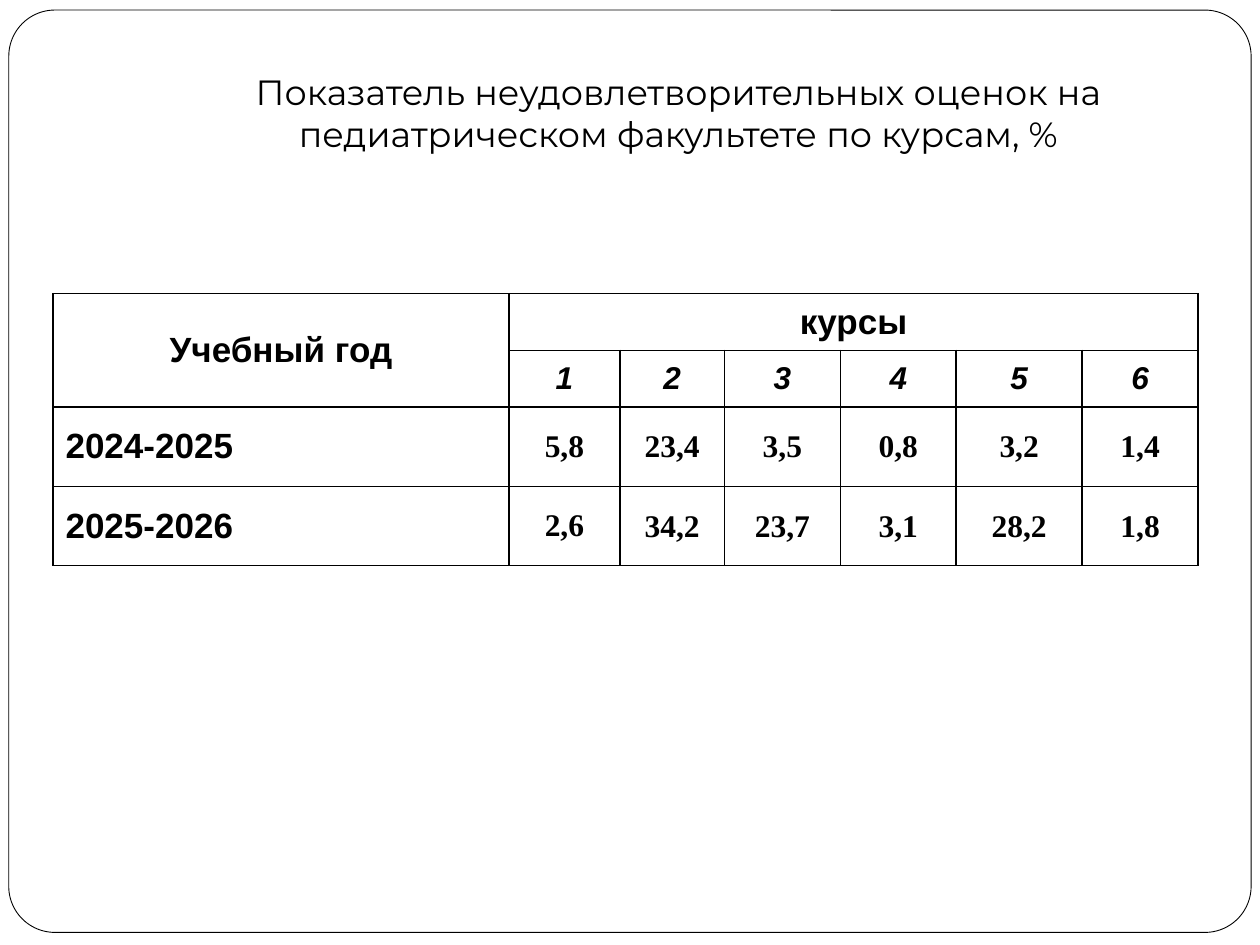
from dataclasses import dataclass

from lxml.etree import SubElement
from pptx import Presentation
from pptx.dml.color import RGBColor
from pptx.enum.shapes import MSO_SHAPE
from pptx.enum.text import MSO_ANCHOR, MSO_AUTO_SIZE, PP_ALIGN
from pptx.oxml.ns import qn
from pptx.util import Inches, Pt

BLACK = RGBColor(0, 0, 0)
WHITE = RGBColor(255, 255, 255)

COLUMN_WIDTHS = (3.62, 0.88, 0.83, 0.92, 0.92, 1, 0.92)
ROW_HEIGHTS = (0.45, 0.45, 0.63, 0.63)
RATES = {
    "2024-2025": ("5,8", "23,4", "3,5", "0,8", "3,2", "1,4"),
    "2025-2026": ("2,6", "34,2", "23,7", "3,1", "28,2", "1,8"),
}


@dataclass(frozen=True)
class CellStyle:
    size: int = 20
    font: str = "Arial"
    italic: bool = False
    align: PP_ALIGN = PP_ALIGN.CENTER
    tight: bool = False


HEADING = CellStyle()
COURSE = CellStyle(size=18, italic=True)
YEAR = CellStyle(align=PP_ALIGN.LEFT)
RATE = CellStyle(size=18, font="Times New Roman")
TIGHT_RATE = CellStyle(size=18, font="Times New Roman", tight=True)


def style_font(font, name: str, size: int) -> None:
    font.name, font.size = name, Pt(size)
    font.color.rgb = BLACK


def add_borders(cell) -> None:
    properties = cell._tc.get_or_add_tcPr()
    for side in ("a:lnL", "a:lnR", "a:lnT", "a:lnB"):
        line = SubElement(properties, qn(side), w=str(Pt(1)))
        fill = SubElement(line, qn("a:solidFill"))
        SubElement(fill, qn("a:srgbClr"), val=str(BLACK))


def write_cell(cell, text: str, style: CellStyle) -> None:
    cell.text_frame.text = text
    cell.vertical_anchor = MSO_ANCHOR.MIDDLE
    if style.tight:
        cell.margin_left = cell.margin_right = cell.margin_top = Inches(0.01)
        cell.margin_bottom = 0
    paragraph = cell.text_frame.paragraphs[0]
    paragraph.alignment = style.align
    font = paragraph.runs[0].font
    style_font(font, style.font, style.size)
    font.bold, font.italic = True, style.italic


def add_frame(slide) -> None:
    """Draw the rounded page frame behind the title."""
    frame = slide.shapes.add_shape(MSO_SHAPE.ROUNDED_RECTANGLE, Inches(0.07),
                                   Inches(0.08), Inches(9.86), Inches(7.32))
    frame.adjustments[0] = 0.05
    frame.shadow.inherit = False
    frame.fill.solid()
    frame.fill.fore_color.rgb = WHITE
    frame.line.color.rgb = BLACK
    frame.line.width = Pt(0.5)
    slide.shapes.title.element.addprevious(frame.element)


def set_title(slide, text: str) -> None:
    title = slide.shapes.title
    title.left, title.top = Inches(1.42), Inches(0.25)
    title.width, title.height = Inches(7.93), Inches(1.08)
    text_frame = title.text_frame
    text_frame.text = text
    text_frame.word_wrap = True
    text_frame.auto_size = MSO_AUTO_SIZE.NONE
    text_frame.vertical_anchor = MSO_ANCHOR.BOTTOM
    text_frame.margin_bottom = Inches(0.1)
    paragraph = text_frame.paragraphs[0]
    paragraph.alignment = PP_ALIGN.CENTER
    style_font(paragraph.runs[0].font, "Montserrat", 20)


def add_rate_table(slide) -> None:
    table = slide.shapes.add_table(
        len(ROW_HEIGHTS), len(COLUMN_WIDTHS), Inches(0.42), Inches(2.33),
        Inches(sum(COLUMN_WIDTHS)), Inches(sum(ROW_HEIGHTS))).table
    table.first_row = table.horz_banding = False
    for column, width in zip(table.columns, COLUMN_WIDTHS):
        column.width = Inches(width)
    for row, height in zip(table.rows, ROW_HEIGHTS):
        row.height = Inches(height)
    for cell in table.iter_cells():
        add_borders(cell)
        cell.fill.solid()
        cell.fill.fore_color.rgb = WHITE

    table.cell(0, 0).merge(table.cell(1, 0))
    table.cell(0, 1).merge(table.cell(0, 6))
    write_cell(table.cell(0, 0), "Учебный год", HEADING)
    write_cell(table.cell(0, 1), "курсы", HEADING)
    for course in range(1, 7):
        write_cell(table.cell(1, course), str(course), COURSE)
    for row, (year, rates) in enumerate(RATES.items(), start=2):
        write_cell(table.cell(row, 0), year, YEAR)
        for course, rate in enumerate(rates, start=1):
            style = RATE if course == 1 else TIGHT_RATE
            write_cell(table.cell(row, course), rate, style)


def main() -> None:
    presentation = Presentation()
    presentation.slide_width, presentation.slide_height = Inches(10), Inches(7.5)
    slide = presentation.slides.add_slide(presentation.slide_layouts[5])
    add_frame(slide)
    set_title(slide, "Показатель неудовлетворительных оценок на "
                     "педиатрическом факультете по курсам, %")
    add_rate_table(slide)
    presentation.save("out.pptx")


if __name__ == "__main__":
    main()
